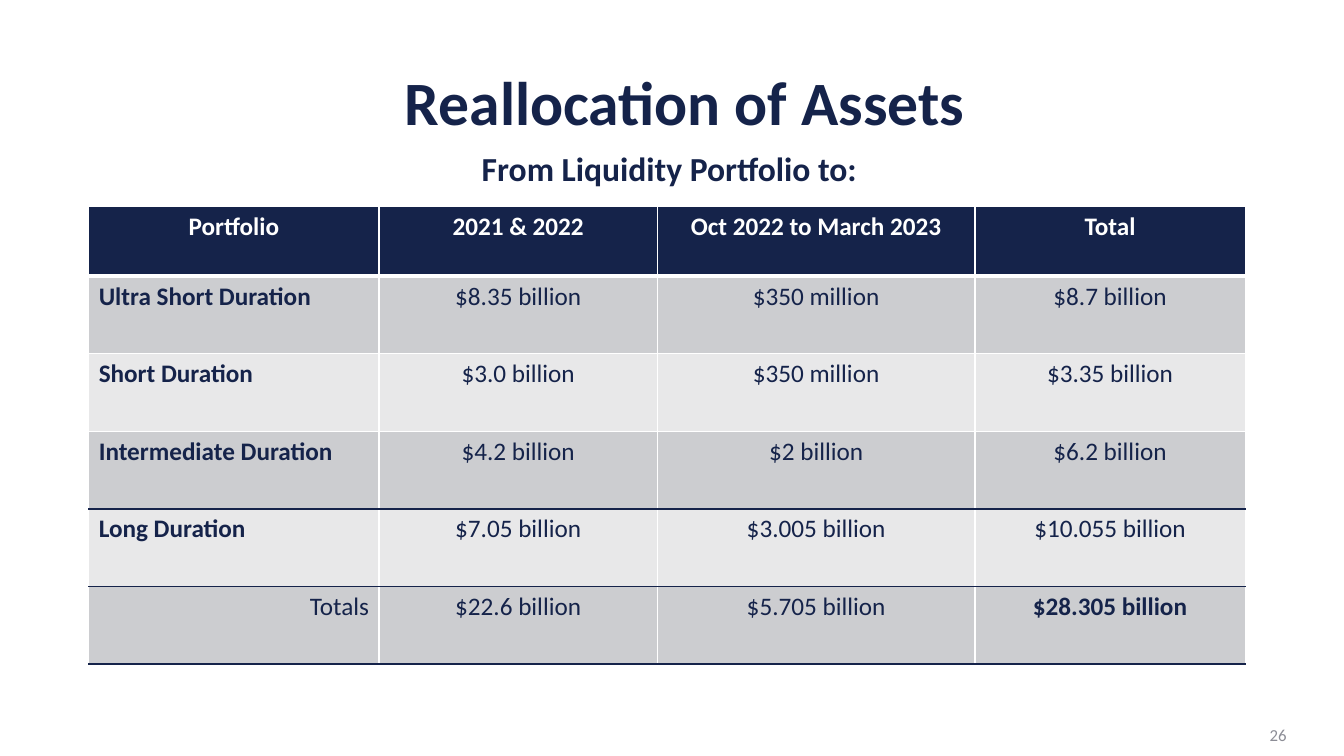
from lxml.etree import SubElement
from pptx import Presentation
from pptx.dml.color import RGBColor
from pptx.enum.text import MSO_ANCHOR, PP_ALIGN
from pptx.oxml.ns import qn
from pptx.util import Inches, Pt

NAVY, WHITE, GREY = "15234A", "FFFFFF", "8C8D96"
BANDS = ["CCCDD0", "E8E8E9"]
LEFT, CENTER, RIGHT = PP_ALIGN.LEFT, PP_ALIGN.CENTER, PP_ALIGN.RIGHT

COLUMN_WIDTHS = [2.88, 2.76, 3.15, 2.68]
ROW_HEIGHTS = [0.69] + [0.77] * 5
REALLOCATIONS = [
    ["Portfolio", "2021 & 2022", "Oct 2022 to March 2023", "Total"],
    ["Ultra Short Duration", "$8.35 billion", "$350 million", "$8.7 billion"],
    ["Short Duration", "$3.0 billion", "$350 million", "$3.35 billion"],
    ["Intermediate Duration", "$4.2 billion", "$2 billion", "$6.2 billion"],
    ["Long Duration", "$7.05 billion", "$3.005 billion", "$10.055 billion"],
    ["Totals", "$22.6 billion", "$5.705 billion", "$28.305 billion"],
]
TOTALS = len(REALLOCATIONS) - 1
# Colour and width of the rule below each row; the first is the table's top edge
ROW_RULES = [(WHITE, 1), (WHITE, 3), (WHITE, 1), (WHITE, 1),
             (NAVY, 1), (NAVY, 1), (NAVY, 1)]


def rgb(value):
    return RGBColor.from_string(value)


def write(frame, text, size, color, bold, align):
    paragraph = frame.paragraphs[0]
    paragraph.text = text
    paragraph.alignment = align
    font = paragraph.font
    font.name, font.size, font.bold = "Calibri", Pt(size), bold
    font.color.rgb = rgb(color)
    return paragraph


def add_label(slide, place, text, size, color, bold, align,
              anchor=MSO_ANCHOR.MIDDLE, wrap=True):
    frame = slide.shapes.add_textbox(*map(Inches, place)).text_frame
    frame.word_wrap = wrap
    frame.vertical_anchor = anchor
    return write(frame, text, size, color, bold, align)


def add_border(cell, side, color, width):
    line = SubElement(cell._tc.get_or_add_tcPr(), qn(f"a:ln{side}"), w=str(Pt(width)))
    fill = SubElement(line, qn("a:solidFill"))
    SubElement(fill, qn("a:srgbClr"), val=color)


def style_cell(cell, row, column, text):
    # Borders come before the fill in a cell's properties
    rules = {"L": (WHITE, 1), "R": (WHITE, 1),
             "T": ROW_RULES[row], "B": ROW_RULES[row + 1]}
    for side, (color, width) in rules.items():
        add_border(cell, side, color, width)
    header = row == 0
    cell.fill.solid()
    cell.fill.fore_color.rgb = rgb(NAVY if header else BANDS[(row - 1) % 2])

    # Row names are bold, and so is the grand total
    if header or column > 0:
        align = CENTER
    else:
        align = RIGHT if row == TOTALS else LEFT
    grand_total = row == TOTALS and column == len(COLUMN_WIDTHS) - 1
    bold = header or grand_total or (column == 0 and row != TOTALS)
    write(cell.text_frame, text, 18, WHITE if header else NAVY, bold, align)


def add_reallocation_table(slide, left, top):
    table = slide.shapes.add_table(
        len(ROW_HEIGHTS), len(COLUMN_WIDTHS), Inches(left), Inches(top),
        Inches(sum(COLUMN_WIDTHS)), Inches(sum(ROW_HEIGHTS))).table
    for column, width in zip(table.columns, COLUMN_WIDTHS):
        column.width = Inches(width)
    for row, height in zip(table.rows, ROW_HEIGHTS):
        row.height = Inches(height)
    for r, texts in enumerate(REALLOCATIONS):
        for c, text in enumerate(texts):
            style_cell(table.cell(r, c), r, c, text)


def main():
    deck = Presentation()
    deck.slide_width, deck.slide_height = Inches(13.33), Inches(7.5)
    slide = deck.slides.add_slide(deck.slide_layouts[6])

    # Headings
    title = add_label(slide, (1.46, 0.67, 10.67, 0.75), "Reallocation of Assets",
                      44, NAVY, True, CENTER)
    title.line_spacing = 0.9
    add_label(slide, (4.68, 1.42, 3.97, 0.5), "From Liquidity Portfolio to:",
              24, NAVY, True, LEFT, MSO_ANCHOR.TOP, wrap=False)

    # Amounts moved, by portfolio and period
    add_reallocation_table(slide, 0.88, 2.05)

    # Page number
    add_label(slide, (9.86, 7.09, 3, 0.4), "26", 12, GREY, False, RIGHT)
    deck.save("out.pptx")


if __name__ == "__main__":
    main()
